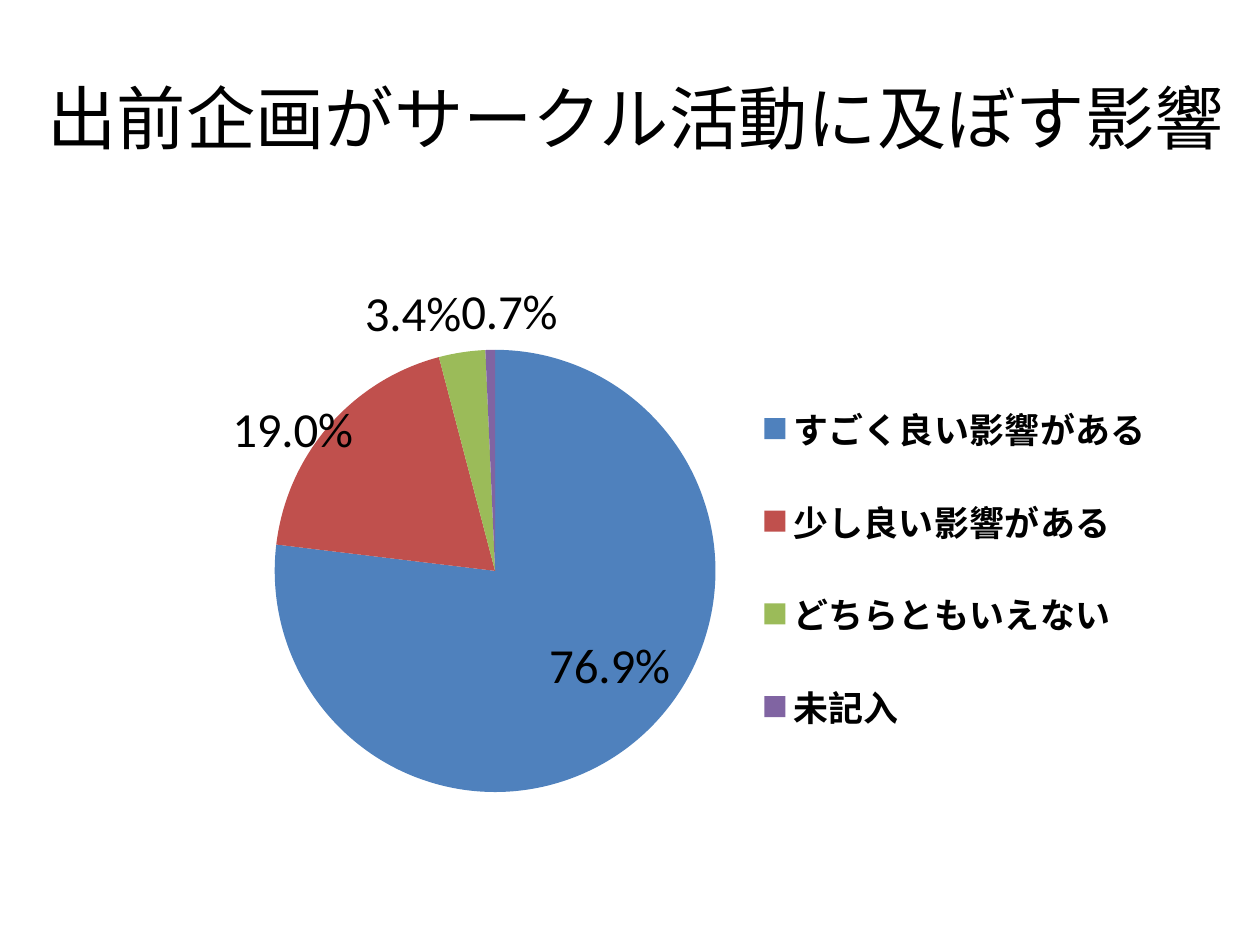
from dataclasses import dataclass

from pptx import Presentation
from pptx.chart.data import CategoryChartData
from pptx.dml.color import RGBColor
from pptx.enum.chart import XL_CHART_TYPE, XL_LABEL_POSITION, XL_LEGEND_POSITION
from pptx.enum.text import MSO_ANCHOR, MSO_AUTO_SIZE, PP_ALIGN
from pptx.oxml import parse_xml
from pptx.oxml.ns import nsdecls, qn
from pptx.util import Inches, Pt

PIE = XL_CHART_TYPE.PIE
RIGHT = XL_LEGEND_POSITION.RIGHT
BEST_FIT = XL_LABEL_POSITION.BEST_FIT
OUTSIDE_END = XL_LABEL_POSITION.OUTSIDE_END
MIDDLE = MSO_ANCHOR.MIDDLE
NO_AUTOFIT = MSO_AUTO_SIZE.NONE
CENTER = PP_ALIGN.CENTER
TITLE_ONLY = 5


@dataclass(frozen=True)
class Theme:
    font: str = "Calibri"
    text: RGBColor = RGBColor.from_string("000000")
    background: RGBColor = RGBColor.from_string("FFFFFF")
    slices: tuple = ("4F81BD", "C0504D", "9BBB59", "8064A2")
    title_size: Pt = Pt(39.6)
    label_size: Pt = Pt(28)
    legend_size: Pt = Pt(20)


THEME = Theme()
PERCENT_FORMAT = "0.0%"
ANSWERS = {
    "すごく良い影響がある": 76.9,
    "少し良い影響がある": 19.0,
    "どちらともいえない": 3.4,
    "未記入": 0.7,
}


def style_font(font, size, bold=False):
    font.name = THEME.font
    font.size = size
    font.bold = bold
    font.color.rgb = THEME.text


def manual_layout(target=None, **fractions):
    """Return a chart layout whose values are fractions of the chart box."""
    parts = f'<c:layoutTarget val="{target}"/>' if target else ""
    if "w" in fractions:
        parts += '<c:xMode val="edge"/><c:yMode val="edge"/>'
    parts += "".join(f'<c:{key} val="{value}"/>' for key, value in fractions.items())
    return parse_xml(
        f'<c:layout {nsdecls("c")}><c:manualLayout>{parts}</c:manualLayout></c:layout>'
    )


def add_title(slide, box, wording):
    title = slide.shapes.title
    title.left, title.top, title.width, title.height = box
    frame = title.text_frame
    frame.word_wrap = True
    frame.auto_size = NO_AUTOFIT
    frame.vertical_anchor = MIDDLE
    paragraph = frame.paragraphs[0]
    paragraph.alignment = CENTER
    run = paragraph.add_run()
    run.text = wording
    style_font(run.font, THEME.title_size)


def format_legend(chart):
    chart.has_legend = True
    legend = chart.legend
    legend.position = RIGHT
    legend.include_in_layout = False
    style_font(legend.font, THEME.legend_size, bold=True)
    element = legend._element
    for layout in element.findall(qn("c:layout")):
        element.remove(layout)
    element.find(qn("c:legendPos")).addnext(
        manual_layout(x=0.56, y=0.28, w=0.41, h=0.62)
    )


def format_labels(plot):
    plot.has_data_labels = True
    labels = plot.series[0].data_labels
    labels.show_percentage = True
    labels.show_value = False
    labels.number_format = PERCENT_FORMAT
    labels.number_format_is_linked = False
    labels.position = BEST_FIT
    style_font(labels.font, THEME.label_size)

    # The second slice's label is nudged towards the pie
    nudged = plot.series[0].points[1].data_label
    style_font(nudged.font, THEME.label_size)
    nudged.position = OUTSIDE_END
    element = labels._element.find(qn("c:dLbl"))
    element.find(qn("c:showVal")).set("val", "0")
    element.find(qn("c:showPercent")).set("val", "1")
    number_format = parse_xml(
        f'<c:numFmt {nsdecls("c")} formatCode="{PERCENT_FORMAT}" sourceLinked="0"/>'
    )
    index = element.find(qn("c:idx"))
    index.addnext(number_format)
    index.addnext(manual_layout(x=0.03, y=0.06))

    # Every percentage stays on one line
    for body in labels._element.iter(qn("a:bodyPr")):
        body.set("wrap", "none")


def add_answer_pie(slide, box, answers):
    data = CategoryChartData()
    data.categories = list(answers)
    data.add_series("Series 1", list(answers.values()))
    chart = slide.shapes.add_chart(PIE, *box, data).chart
    chart.has_title = False
    style_font(chart.font, THEME.label_size)

    # Slices
    plot = chart.plots[0]
    plot.vary_by_categories = True
    for index, color in enumerate(THEME.slices):
        fill = plot.series[0].points[index].format.fill
        fill.solid()
        fill.fore_color.rgb = RGBColor.from_string(color)

    format_labels(plot)
    format_legend(chart)

    # Pie position
    plot_area = chart._chartSpace.chart.plotArea
    for layout in plot_area.findall(qn("c:layout")):
        plot_area.remove(layout)
    plot_area.insert(0, manual_layout("inner", x=0.07, y=0.2, w=0.45, h=0.81))


def main():
    presentation = Presentation()
    presentation.slide_width, presentation.slide_height = Inches(10), Inches(7.5)
    slide = presentation.slides.add_slide(presentation.slide_layouts[TITLE_ONLY])
    slide.background.fill.solid()
    slide.background.fill.fore_color.rgb = THEME.background

    title_box = [Inches(length) for length in (0.2, 0.3, 9.69, 1.25)]
    pie_box = [Inches(length) for length in (1.61, 1.39, 7.8, 5.28)]
    add_title(slide, title_box, "出前企画がサークル活動に及ぼす影響")
    add_answer_pie(slide, pie_box, ANSWERS)
    presentation.save("out.pptx")


if __name__ == "__main__":
    main()
